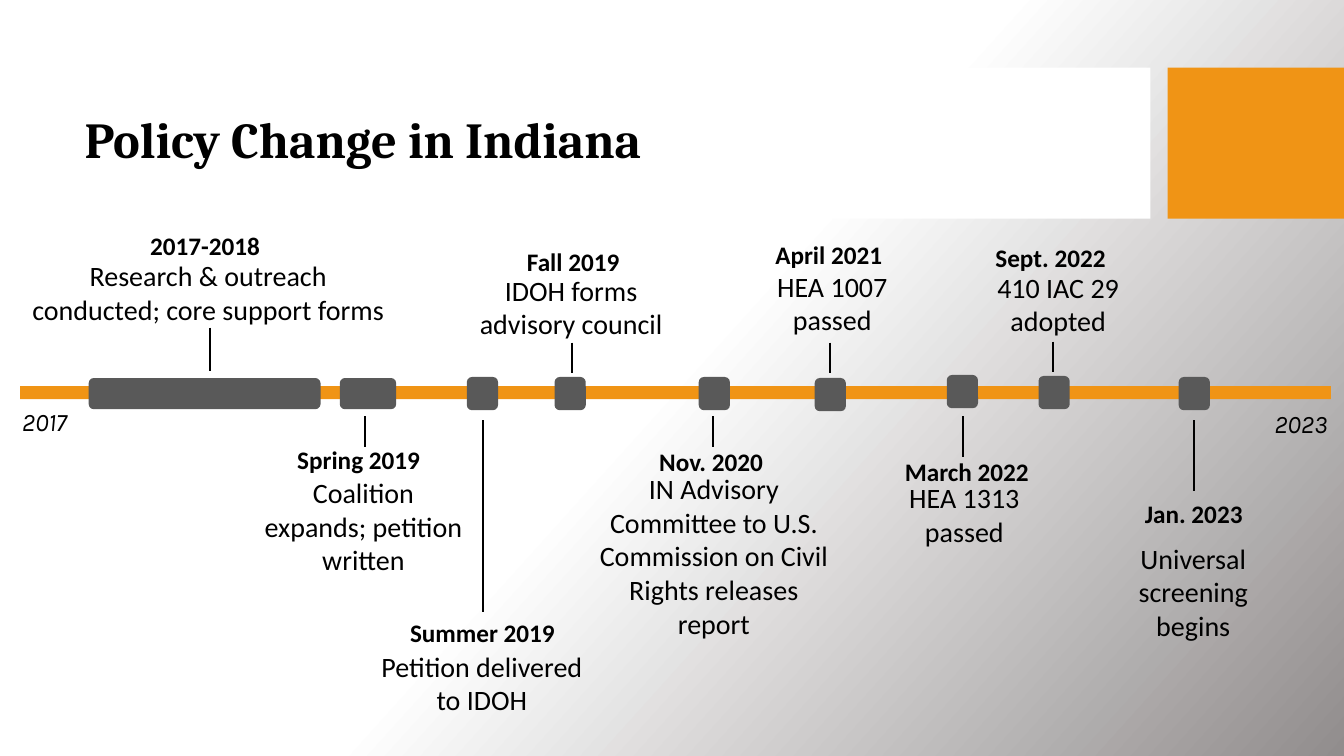
"""Build a timeline slide of policy change in Indiana."""
from lxml import etree
from pptx import Presentation
from pptx.dml.color import RGBColor
from pptx.enum.shapes import MSO_CONNECTOR, MSO_SHAPE
from pptx.enum.text import MSO_ANCHOR, MSO_AUTO_SIZE, PP_ALIGN
from pptx.oxml.ns import qn
from pptx.util import Emu, Pt

PX = 9144
LEFT, CENTER = PP_ALIGN.LEFT, PP_ALIGN.CENTER
RECT, ROUND = MSO_SHAPE.RECTANGLE, MSO_SHAPE.ROUNDED_RECTANGLE
ORANGE, GRAY, WHITE, BLACK = "F09415", "595959", "FFFFFF", "000000"


def add_block(kind, box, fill):
    block = slide.shapes.add_shape(kind, *[Emu(n * PX) for n in box])
    block.shadow.inherit = False
    block.fill.solid()
    block.fill.fore_color.rgb = RGBColor.from_string(fill)
    block.line.fill.background()


def add_text(text, box, size, align=CENTER, font="Calibri", bold=False, italic=False):
    label = slide.shapes.add_textbox(*[Emu(n * PX) for n in box])
    frame = label.text_frame
    frame.word_wrap = True
    frame.auto_size = MSO_AUTO_SIZE.SHAPE_TO_FIT_TEXT
    para = frame.paragraphs[0]
    para.alignment = align
    run = para.add_run()
    run.text = text
    run.font.name = font
    run.font.size = Pt(size)
    run.font.bold = bold
    run.font.italic = italic
    run.font.color.rgb = RGBColor.from_string(BLACK)
    return frame


deck = Presentation()
deck.slide_width, deck.slide_height = Emu(1333 * PX), Emu(750 * PX)
slide = deck.slides.add_slide(deck.slide_layouts[6])

back = slide.background.fill
back.gradient()
back.gradient_angle = 318
for stop, place, color in zip(back.gradient_stops, (0.5, 1), (WHITE, "918D8D")):
    stop.position = place
    stop.color.rgb = RGBColor.from_string(color)

add_block(RECT, (0, 67, 1141, 150), WHITE)
add_block(RECT, (1158, 67, 175, 150), ORANGE)
title = add_text("Policy Change in Indiana", (74, 82, 1051, 118), 36, LEFT, "Cambria", bold=True)
title.auto_size = MSO_AUTO_SIZE.NONE
title.vertical_anchor = MSO_ANCHOR.MIDDLE
title.paragraphs[0].line_spacing = 0.9

add_block(RECT, (20, 383, 1300, 13), ORANGE)
for year, left, top in (("2017", 12, 398), ("2023", 1254, 400)):
    add_text(year, (left, top, 84, 40), 18, LEFT, "Karla", italic=True)

# Each event: date, its box and alignment; text, its box and line count; marker; stem
events = [
    ("2017-2018", (139, 224, 156), LEFT, "Research & outreach conducted; core support forms",
     (16, 252, 381), 2, (88, 375, 230, 31), (208, 325, 368)),
    ("Spring 2019", (285, 436, 156), LEFT, "Coalition expands; petition written",
     (251, 467, 219), 3, (337, 375, 56, 31), (362, 413, 443)),
    ("Summer 2019", (376, 608, 205), CENTER, "Petition delivered to IDOH",
     (365, 639, 226), 2, (463, 374, 31, 33), (479, 417, 607)),
    ("Fall 2019", (497, 239, 143), CENTER, "IDOH forms advisory council",
     (465, 266, 203), 2, (550, 374, 31, 33), (567, 340, 370)),
    ("Nov. 2020", (644, 438, 156), LEFT,
     "IN Advisory Committee to U.S. Commission on Civil Rights releases report",
     (579, 463, 258), 5, (693, 374, 31, 33), (707, 413, 443)),
    ("April 2021", (749, 233, 146), CENTER, "HEA 1007 passed",
     (724, 262, 203), 2, (808, 375, 31, 33), (823, 340, 370)),
    ("March 2022", (886, 448, 146), CENTER, "HEA 1313 passed",
     (855, 472, 203), 2, (939, 372, 31, 33), (955, 413, 453)),
    ("Sept. 2022", (969, 236, 146), CENTER, "410 IAC 29 adopted",
     (947, 263, 205), 2, (1030, 373, 31, 33), (1044, 339, 369)),
    ("Jan. 2023", (1111, 489, 146), CENTER, "Universal screening begins",
     (1081, 532, 205), 3, (1169, 374, 31, 33), (1184, 417, 487)),
]
for date, head, align, text, body, rows, mark, (x, top, end) in events:
    add_block(ROUND, mark, GRAY)
    add_text(date, (*head, 40), 18, align, bold=True)
    add_text(text, (*body, 9 + 34 * rows), 20)
    stem = slide.shapes.add_connector(
        MSO_CONNECTOR.STRAIGHT, *[Emu(n * PX) for n in (x, top, x, end)])
    stem.line.color.rgb = RGBColor.from_string(BLACK)
    stem.line.width = Pt(1.5)
    etree.SubElement(stem._element.spPr, qn("a:effectLst"))

deck.save("out.pptx")
